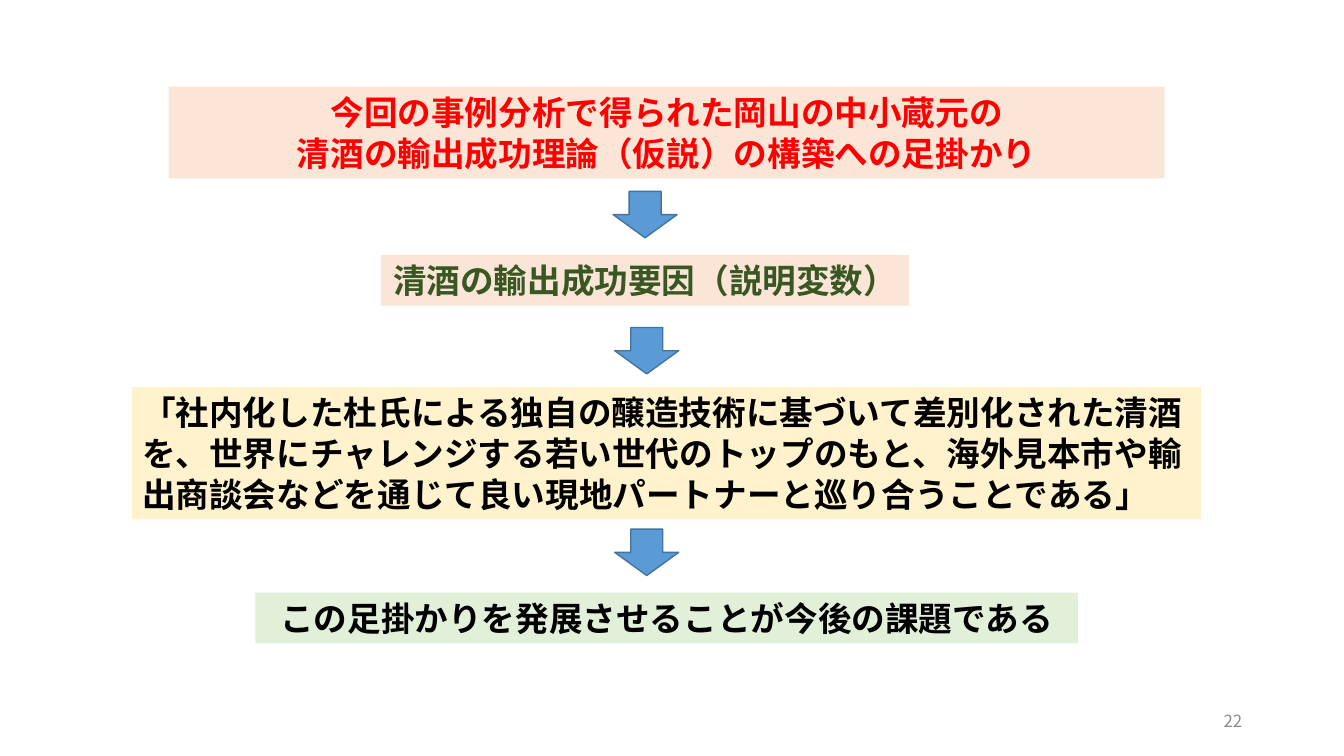
from dataclasses import dataclass

from lxml import etree
from pptx import Presentation
from pptx.dml.color import RGBColor
from pptx.enum.shapes import MSO_SHAPE
from pptx.enum.text import MSO_ANCHOR, MSO_AUTO_SIZE, PP_ALIGN
from pptx.oxml.ns import qn
from pptx.util import Inches, Pt

DOWN_ARROW = MSO_SHAPE.DOWN_ARROW
TOP, MIDDLE = MSO_ANCHOR.TOP, MSO_ANCHOR.MIDDLE
LEFT, CENTER, RIGHT = PP_ALIGN.LEFT, PP_ALIGN.CENTER, PP_ALIGN.RIGHT
NO_AUTOFIT = MSO_AUTO_SIZE.NONE
TITLE_ONLY = 5


@dataclass(frozen=True)
class Theme:
    font: str = "Noto Sans CJK JP"
    body_size: int = 24
    number_size: int = 12
    line_pitch: int = 29
    peach: str = "FBE5D6"
    cream: str = "FFF2CC"
    mint: str = "E2F0D9"
    red: str = "FF0000"
    green: str = "385723"
    black: str = "000000"
    gray: str = "8C8C8C"
    arrow: str = "5B9BD5"
    arrow_line: str = "43739E"


def rgb(value):
    return RGBColor.from_string(value)


def write(sp, text, *, font, size, color, bold=False, align=CENTER,
          anchor=TOP, pitch=None):
    tf = sp.text_frame
    tf.word_wrap = True
    tf.auto_size = NO_AUTOFIT
    tf.vertical_anchor = anchor
    for i, line in enumerate(text.split("\n")):
        p = tf.paragraphs[0] if i == 0 else tf.add_paragraph()
        p.alignment = align
        if pitch:
            p.line_spacing = Pt(pitch)
        r = p.add_run()
        r.text = line
        r.font.name = font
        r.font.size = Pt(size)
        r.font.bold = bold
        r.font.color.rgb = rgb(color)
        etree.SubElement(r.font._element, qn("a:ea"), typeface=font)


class FlowSlide:
    """Places elements by centre, top, width and height in percent of the slide."""

    def __init__(self, prs, theme):
        self.prs, self.theme = prs, theme
        self.slide = prs.slides.add_slide(prs.slide_layouts[TITLE_ONLY])

    def frame(self, center, top, width, height):
        w, h = self.prs.slide_width / 100, self.prs.slide_height / 100
        return (int((center - width / 2) * w), int(top * h),
                int(width * w), int(height * h))

    def fill_band(self, sp, text, fill, color, align=CENTER):
        t = self.theme
        sp.fill.solid()
        sp.fill.fore_color.rgb = rgb(fill)
        write(sp, text, font=t.font, size=t.body_size, color=color,
              bold=True, align=align, pitch=t.line_pitch)

    def title(self, text, place, fill, color):
        sp = self.slide.shapes.title
        sp.left, sp.top, sp.width, sp.height = self.frame(*place)
        self.fill_band(sp, text, fill, color)

    def band(self, text, place, fill, color, align=CENTER):
        sp = self.slide.shapes.add_textbox(*self.frame(*place))
        self.fill_band(sp, text, fill, color, align)

    def arrow(self, center, top):
        sp = self.slide.shapes.add_shape(
            DOWN_ARROW, *self.frame(center, top, 4.76, 6.13))
        sp.shadow.inherit = False
        sp.fill.solid()
        sp.fill.fore_color.rgb = rgb(self.theme.arrow)
        sp.line.color.rgb = rgb(self.theme.arrow_line)
        sp.line.width = Pt(1)

    def page_number(self, text, place):
        t = self.theme
        sp = self.slide.shapes.add_textbox(*self.frame(*place))
        write(sp, text, font=t.font, size=t.number_size, color=t.gray,
              align=RIGHT, anchor=MIDDLE)


def main():
    prs = Presentation()
    prs.slide_width, prs.slide_height = Inches(13.33), Inches(7.5)
    t = Theme()
    s = FlowSlide(prs, t)

    s.title("今回の事例分析で得られた岡山の中小蔵元の\n"
            "清酒の輸出成功理論（仮説）の構築への足掛かり",
            (49.6, 11.47, 74.12, 12.13), t.peach, t.red)
    s.band("清酒の輸出成功要因（説明変数）",
           (48, 33.73, 39.3, 6.7), t.peach, t.green)
    s.band("「社内化した杜氏による独自の醸造技術に基づいて差別化された清酒を、"
           "世界にチャレンジする若い世代のトップのもと、海外見本市や輸出商談会などを通じて"
           "良い現地パートナーと巡り合うことである」",
           (49.6, 51.2, 79.52, 17.5), t.cream, t.black, LEFT)
    s.band("この足掛かりを発展させることが今後の課題である",
           (49.6, 78.4, 61.2, 6.7), t.mint, t.black)
    for center, top in ((48, 25.33), (48.12, 43.33), (48.12, 70)):
        s.arrow(center, top)
    s.page_number("22", (81.92, 92.67, 22.5, 5.33))

    prs.save("out.pptx")


if __name__ == "__main__":
    main()
